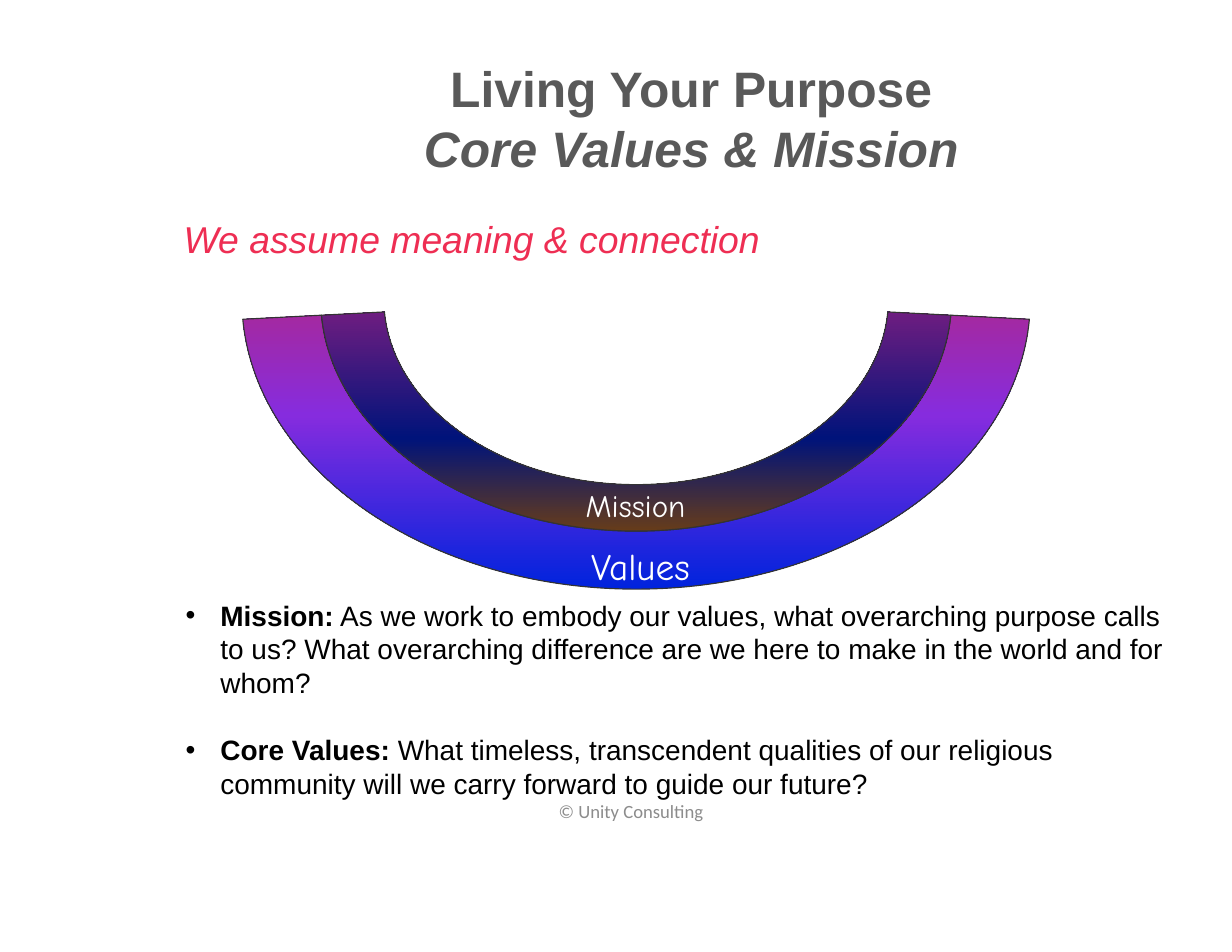
import copy
import math

import pptx
import pptx.dml.color
import pptx.enum.text
import pptx.oxml.ns
import pptx.util
from lxml import etree

Inches = pptx.util.Inches
Pt = pptx.util.Pt
RGBColor = pptx.dml.color.RGBColor
Align = pptx.enum.text.PP_ALIGN
Anchor = pptx.enum.text.MSO_ANCHOR
qn = pptx.oxml.ns.qn

GREY = RGBColor(0x59, 0x59, 0x59)
FOOTER_GREY = RGBColor(0x8C, 0x8C, 0x8C)
OUTLINE = RGBColor(0x33, 0x33, 0x33)
PINK = RGBColor(0xEE, 0x2E, 0x53)
BLACK = RGBColor(0, 0, 0)
WHITE = RGBColor(0xFF, 0xFF, 0xFF)

# Gradient stops run from the bottom of a bowl's ellipse to its top.
VALUES_STOPS = [
    (0, RGBColor(0x00, 0x23, 0xDD)), (30, RGBColor(0x86, 0x2C, 0xDE)),
    (64, RGBColor(0xC1, 0x25, 0x64)), (88, RGBColor(0xFF, 0x00, 0x00)),
    (100, RGBColor(0xFF, 0x82, 0x00))]
MISSION_STOPS = [
    (0, RGBColor(0x66, 0x3C, 0x1A)), (20, RGBColor(0x00, 0x13, 0x7A)),
    (50, RGBColor(0x79, 0x1E, 0x81)), (75, RGBColor(0xA9, 0x1F, 0x46)),
    (88, RGBColor(0xF2, 0x73, 0x00)), (100, RGBColor(0xFF, 0xBF, 0x00))]

CENTRE_X, CENTRE_Y = 5.68, 2.67
RADIUS_X, RADIUS_Y = 3.52, 2.59
RING_RATIO = 0.8
TILT = 4  # degrees below the horizontal at which a bowl ends
CURVE_STARTS = (0, 3, 7, 10)  # line 6 joins the outer arc to the inner one

BULLETS = [
    ("Mission:", " As we work to embody our values, what overarching purpose "
     "calls to us? What overarching difference are we here to make in the "
     "world and for whom?"),
    ("Core Values:", " What timeless, transcendent qualities of our religious "
     "community will we carry forward to guide our future?")]


def add_box(page, left, top, width, height, anchor=Anchor.TOP, wrap=True,
            insets=(0.1, 0.05)):
    box = page.shapes.add_textbox(
        Inches(left), Inches(top), Inches(width), Inches(height))
    frame = box.text_frame
    frame.word_wrap = wrap
    frame.vertical_anchor = anchor
    frame.margin_left = frame.margin_right = Inches(insets[0])
    frame.margin_top = frame.margin_bottom = Inches(insets[1])
    return frame


def add_span(para, text, size, color, font="Arial", bold=False, italic=False):
    span = para.add_run()
    span.text = text
    span.font.name = font
    span.font.size = Pt(size)
    span.font.bold = bold
    span.font.italic = italic
    span.font.color.rgb = color


def add_label(page, left, top, width, height, text, size, color, font,
              wrap=True, anchor=Anchor.TOP, align=Align.CENTER):
    """Add one line of text."""
    para = add_box(page, left, top, width, height, anchor, wrap).paragraphs[0]
    para.alignment = align
    add_span(para, text, size, color, font)


def arc_points(scale):
    """Return end and control points of two curves, from right to left."""
    sweep = math.radians(90 - TILT)
    reach = 4 / 3 * math.tan(sweep / 4)

    def point(angle, shift):
        cosine, sine = math.cos(angle), math.sin(angle)
        return (Inches(CENTRE_X + RADIUS_X * scale * (cosine - shift * sine)),
                Inches(CENTRE_Y + RADIUS_Y * scale * (sine + shift * cosine)))

    start = math.radians(TILT)
    points = [point(start, 0)]
    for begin in (start, start + sweep):
        end = begin + sweep
        points += [point(begin, reach), point(end, -reach), point(end, 0)]
    return points


def bend(shape):
    """Turn each three lines of an arc into one cubic curve."""
    lines = list(shape._element.iter(qn("a:lnTo")))
    for first in CURVE_STARTS:
        curve = etree.Element(qn("a:cubicBezTo"))
        lines[first].addprevious(curve)
        for line in lines[first:first + 3]:
            curve.append(line[0])
            line.getparent().remove(line)


def set_gradient(shape, stops):
    shape.fill.gradient()
    shape.fill.gradient_angle = 90
    stop_list = shape._element.spPr.find(qn("a:gradFill")).find(qn("a:gsLst"))
    pattern = copy.deepcopy(stop_list[0])
    for stop in list(stop_list):
        stop_list.remove(stop)
    for _ in stops:
        stop_list.append(copy.deepcopy(pattern))
    for stop, (percent, color) in zip(shape.fill.gradient_stops, stops):
        stop.position = percent / 100
        stop.color.rgb = color


def add_bowl(page, scale, stops):
    """Add the lower half of an elliptical ring, framed by its full ellipse."""
    outer = arc_points(scale)
    inner = arc_points(scale * RING_RATIO)[::-1]
    builder = page.shapes.build_freeform(
        Inches(CENTRE_X - RADIUS_X * scale),
        Inches(CENTRE_Y - RADIUS_Y * scale))
    builder.move_to(*outer[0])
    builder.add_line_segments(outer[1:] + inner, close=True)
    bowl = builder.convert_to_shape()
    bend(bowl)
    bowl.shadow.inherit = False
    set_gradient(bowl, stops)
    bowl.line.color.rgb = OUTLINE
    bowl.line.width = Pt(0.75)


def add_title(page):
    frame = add_box(page, 1.9, 0.34, 8.55, 1.42, Anchor.MIDDLE,
                    insets=(0.11, 0.06))
    para = frame.paragraphs[0]
    para.alignment = Align.CENTER
    add_span(para, "Living Your Purpose", 32, GREY, bold=True)
    para.add_line_break()
    add_span(para, "Core Values & Mission", 32, GREY, bold=True, italic=True)


def add_bullets(page):
    frame = add_box(page, 1.56, 4.37, 8.94, 2.82, Anchor.BOTTOM)
    for index, (term, question) in enumerate(BULLETS):
        para = frame.paragraphs[0] if index == 0 else frame.add_paragraph()
        properties = para._p.get_or_add_pPr()
        properties.set("marL", str(Inches(0.31)))
        properties.set("indent", str(-Inches(0.31)))
        etree.SubElement(properties, qn("a:buFont")).set("typeface", "Arial")
        etree.SubElement(properties, qn("a:buChar")).set("char", "•")
        if index:
            para.space_before = Pt(21.6)
        add_span(para, term, 18, BLACK, bold=True)
        add_span(para, question, 18, BLACK)


def main():
    deck = pptx.Presentation()
    deck.slide_width, deck.slide_height = Inches(11), Inches(8.5)
    page = deck.slides.add_slide(deck.slide_layouts[6])

    add_title(page)
    add_bowl(page, 1, VALUES_STOPS)
    add_label(page, 5.18, 4.8, 1.12, 0.49, "Values", 24, WHITE, "Comic Neue",
              wrap=False, align=Align.LEFT)
    add_bowl(page, RING_RATIO, MISSION_STOPS)
    add_label(page, 5.13, 4.29, 1.09, 0.42, "Mission", 20, WHITE, "Comic Neue",
              wrap=False)
    add_bullets(page)
    add_label(page, 4.05, 7.04, 3.17, 0.4, "© Unity Consulting", 12,
              FOOTER_GREY, "Calibri", anchor=Anchor.MIDDLE)
    subtitle = add_box(page, 1.53, 1.87, 8.55, 4.09, insets=(0.11, 0.06))
    add_span(subtitle.paragraphs[0], "We assume meaning & connection", 24,
             PINK, italic=True)

    deck.save("out.pptx")


if __name__ == "__main__":
    main()
